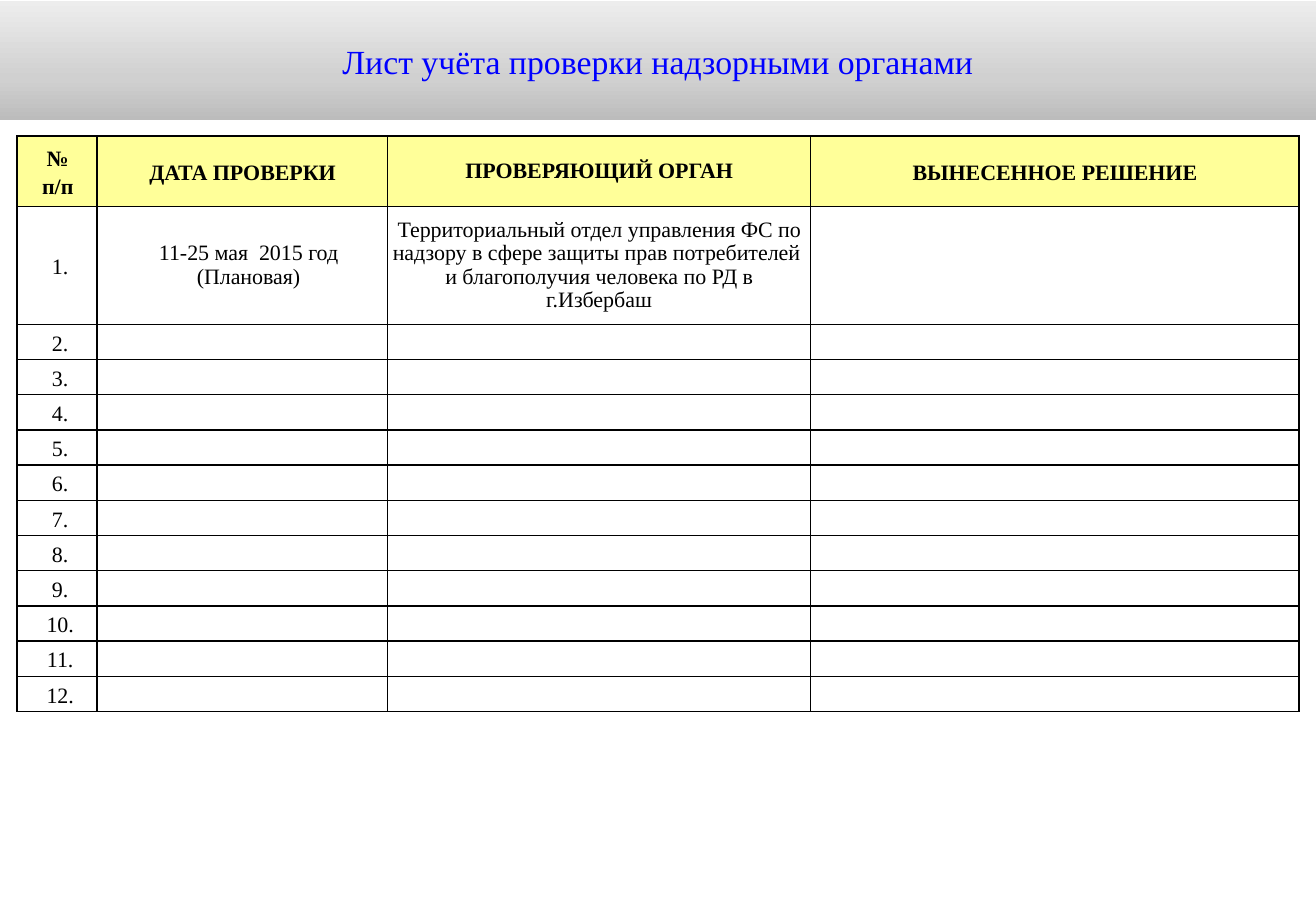
from lxml.etree import SubElement
from pptx import Presentation
from pptx.dml.color import RGBColor
from pptx.enum.shapes import MSO_SHAPE
from pptx.enum.text import MSO_ANCHOR, PP_ALIGN
from pptx.oxml.ns import qn
from pptx.util import Inches, Pt

HUES = {
    "black": "000000",
    "white": "FFFFFF",
    "blue": "0000FF",
    "yellow": "FFFF99",
    "dark": "BCBCBC",
    "mid": "D0D0D0",
    "light": "EDEDED",
}
FONT = "Times New Roman"
HEADS = ["№\nп/п", "ДАТА ПРОВЕРКИ", "ПРОВЕРЯЮЩИЙ ОРГАН", "ВЫНЕСЕННОЕ РЕШЕНИЕ"]
FIRST = [
    "1.",
    "11-25 мая  2015 год (Плановая)",
    "Территориальный отдел управления ФС по надзору в сфере защиты прав "
    "потребителей  и благополучия человека по РД в г.Избербаш",
    "",
]
ROWS = [HEADS, FIRST] + [[f"{n}.", "", "", ""] for n in range(2, 13)]
WIDTHS = [0.66, 2.39, 3.48, 4.02]
HEIGHTS = [0.58, 0.97] + [0.29] * 11


def write(frame, text, size=13, hue="black", bold=False, space=None, indent=0):
    frame.word_wrap = True
    for i, line in enumerate(text.split("\n")):
        para = frame.paragraphs[0] if i == 0 else frame.add_paragraph()
        para.alignment = PP_ALIGN.CENTER
        if space:
            para.line_spacing = space
        if indent:
            props = para._p.get_or_add_pPr()
            props.set("marL", str(Inches(indent)))
            props.set("indent", "0")
        if not line:
            SubElement(para._p, qn("a:endParaRPr"), sz=str(size * 100))
            continue
        run = para.add_run()
        run.text = line
        run.font.name = FONT
        run.font.size = Pt(size)
        run.font.bold = bold
        run.font.color.rgb = RGBColor.from_string(HUES[hue])


def shade(shape, stops):
    shape.fill.gradient()
    shape.fill.gradient_angle = 90
    stop_list = shape._element.spPr.find(qn("a:gradFill")).find(qn("a:gsLst"))
    for old in list(stop_list):
        stop_list.remove(old)
    for place, hue in stops:
        stop = SubElement(stop_list, qn("a:gs"), pos=str(place * 1000))
        SubElement(stop, qn("a:srgbClr"), val=HUES[hue])


def frame_cell(cell):
    props = cell._tc.get_or_add_tcPr()
    for side in ("lnL", "lnR", "lnT", "lnB"):
        line = SubElement(props, qn(f"a:{side}"), w=str(Pt(1)))
        fill = SubElement(line, qn("a:solidFill"))
        SubElement(fill, qn("a:srgbClr"), val=HUES["black"])


def add_title(slide, left, top, width, height):
    bar = slide.shapes.add_shape(
        MSO_SHAPE.RECTANGLE, Inches(left), Inches(top), Inches(width), Inches(height)
    )
    bar.shadow.inherit = False
    bar.line.fill.background()
    shade(bar, [(0, "dark"), (35, "mid"), (100, "light")])
    bar.text_frame.vertical_anchor = MSO_ANCHOR.MIDDLE
    write(bar.text_frame, "Лист учёта проверки надзорными органами", size=20, hue="blue")


def add_log(slide, left, top, width, height):
    table = slide.shapes.add_table(
        len(ROWS), len(WIDTHS), Inches(left), Inches(top), Inches(width), Inches(height)
    ).table
    table.first_row = False
    table.horz_banding = False
    for col, size in zip(table.columns, WIDTHS):
        col.width = Inches(size)
    for row, size in zip(table.rows, HEIGHTS):
        row.height = Inches(size)
    for r, texts in enumerate(ROWS):
        for c, text in enumerate(texts):
            cell = table.cell(r, c)
            frame_cell(cell)
            cell.fill.solid()
            cell.fill.fore_color.rgb = RGBColor.from_string(
                HUES["yellow" if r == 0 else "white"]
            )
            cell.margin_left = cell.margin_right = Inches(0.03)
            cell.margin_top = cell.margin_bottom = 0
            cell.vertical_anchor = MSO_ANCHOR.MIDDLE
            tight = c == 2 or (r == 1 and c == 1)
            indent = 0
            if c == 0:
                indent = 0.01 if r == 0 else 0.05
            elif c == 1 and r == 1:
                indent = 0.1
            write(
                cell.text_frame, text, bold=r == 0,
                space=Pt(14) if tight else 1.15, indent=indent,
            )


def main():
    deck = Presentation()
    deck.slide_width = Inches(10.83)
    deck.slide_height = Inches(7.5)
    slide = deck.slides.add_slide(deck.slide_layouts[6])
    add_log(slide, 0.14, 1.12, sum(WIDTHS), sum(HEIGHTS))
    add_title(slide, 0, 0.01, 10.83, 0.98)
    deck.save("out.pptx")


if __name__ == "__main__":
    main()
